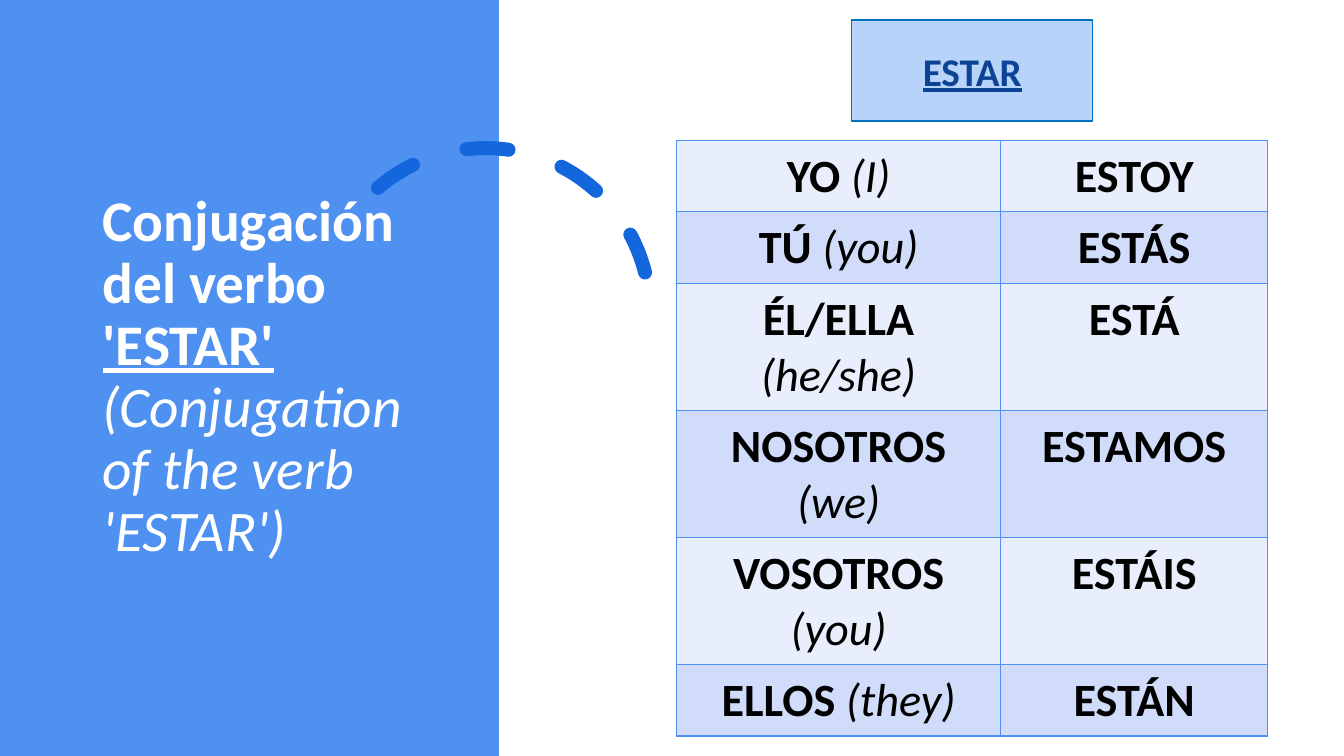
from lxml.etree import SubElement
from pptx import Presentation
from pptx.dml.color import RGBColor
from pptx.enum.dml import MSO_LINE
from pptx.enum.shapes import MSO_SHAPE as SHAPE
from pptx.enum.text import MSO_ANCHOR as ANCHOR, PP_ALIGN as ALIGN
from pptx.oxml.ns import qn
from pptx.util import Pt

WHITE = RGBColor(0xFF, 0xFF, 0xFF)
BLACK = RGBColor(0x00, 0x00, 0x00)
PANEL_BLUE = RGBColor(0x4E, 0x91, 0xF0)
ARC_BLUE = RGBColor(0x13, 0x66, 0xDC)
VERB_FILL = RGBColor(0xB8, 0xD3, 0xF9)
VERB_LINE = RGBColor(0x00, 0x70, 0xC0)
VERB_TEXT = RGBColor(0x0C, 0x44, 0x93)
BANDS = (RGBColor(0xE9, 0xEE, 0xFC), RGBColor(0xD0, 0xDC, 0xF9))

CONJUGATION = [
    ("YO", "(I)", "ESTOY"),
    ("TÚ", "(you)", "ESTÁS"),
    ("ÉL/ELLA", "(he/she)", "ESTÁ"),
    ("NOSOTROS", "(we)", "ESTAMOS"),
    ("VOSOTROS", "(you)", "ESTÁIS"),
    ("ELLOS", "(they)", "ESTÁN"),
]
ROW_HEIGHTS = (48, 48, 81.4, 81.4, 81.4, 48)


def add_run(paragraph, text, size, color, bold=False, italic=False, underline=False):
    run = paragraph.add_run()
    run.text = text
    font = run.font
    font.name, font.size, font.color.rgb = "Calibri", Pt(size), color
    font.bold, font.italic, font.underline = bold, italic, underline


def add_borders(cell, color, width):
    """Draw all four cell borders; call before the cell's fill is set."""
    properties = cell._tc.get_or_add_tcPr()
    for side in ("a:lnL", "a:lnR", "a:lnT", "a:lnB"):
        border = SubElement(properties, qn(side), w=str(Pt(width)))
        fill = SubElement(border, qn("a:solidFill"))
        SubElement(fill, qn("a:srgbClr"), val=str(color))


prs = Presentation()
prs.slide_width, prs.slide_height = Pt(960), Pt(540)
slide = prs.slides.add_slide(prs.slide_layouts[6])
shapes = slide.shapes

# Left panel and dashed arc
panel = shapes.add_shape(SHAPE.RECTANGLE, 0, 0, Pt(356.4), Pt(540))
panel.shadow.inherit = False
panel.fill.solid()
panel.fill.fore_color.rgb = PANEL_BLUE
panel.line.fill.background()

arc = shapes.add_shape(SHAPE.ARC, Pt(229), Pt(105.8), Pt(235.4), Pt(235.4))
arc.shadow.inherit = False
arc.rotation = 345.8
arc.adjustments[0] = 146.13
arc.adjustments[1] = 0
arc.fill.background()
arc.line.color.rgb = ARC_BLUE
arc.line.width = Pt(10)
arc.line.dash_style = MSO_LINE.DASH
arc.line._get_or_add_ln().set("cap", "rnd")

# Title
title = shapes.add_textbox(Pt(66.2), Pt(50.4), Pt(232.6), Pt(438.5)).text_frame
title.word_wrap = True
title.vertical_anchor = ANCHOR.MIDDLE
heading = title.paragraphs[0]
heading.line_spacing = 0.9
add_run(heading, "Conjugación del verbo ", 41, WHITE, bold=True)
add_run(heading, "'ESTAR'", 41, WHITE, bold=True, underline=True)
heading.add_line_break()
add_run(heading, "(Conjugation of the verb 'ESTAR')", 41, WHITE, italic=True)

# Conjugation table
table = shapes.add_table(len(CONJUGATION), 2, Pt(483.1), Pt(100.1),
                         Pt(422.4), Pt(sum(ROW_HEIGHTS))).table
table.columns[0].width, table.columns[1].width = Pt(231.8), Pt(190.6)
for row, (pronoun, meaning, form) in enumerate(CONJUGATION):
    table.rows[row].height = Pt(ROW_HEIGHTS[row])
    for column in range(2):
        cell = table.cell(row, column)
        cell.margin_left = cell.margin_right = Pt(11.5)
        cell.margin_top = cell.margin_bottom = Pt(5.76)
        add_borders(cell, PANEL_BLUE, 1)
        cell.fill.solid()
        cell.fill.fore_color.rgb = BANDS[row % 2]
        entry = cell.text_frame.paragraphs[0]
        entry.alignment = ALIGN.CENTER
        if column == 0:
            add_run(entry, pronoun + " ", 33, BLACK, bold=True)
            add_run(entry, meaning, 33, BLACK, italic=True)
        else:
            add_run(entry, form, 33, BLACK, bold=True)

# Verb box above the table
verb = shapes.add_shape(SHAPE.RECTANGLE, Pt(608.4), Pt(14.4), Pt(172.1), Pt(72))
verb.shadow.inherit = False
verb.fill.solid()
verb.fill.fore_color.rgb = VERB_FILL
verb.line.color.rgb = VERB_LINE
verb.line.width = Pt(1)
verb.text_frame.vertical_anchor = ANCHOR.MIDDLE
label = verb.text_frame.paragraphs[0]
label.alignment = ALIGN.CENTER
add_run(label, "ESTAR", 28, VERB_TEXT, bold=True, underline=True)

prs.save("out.pptx")
